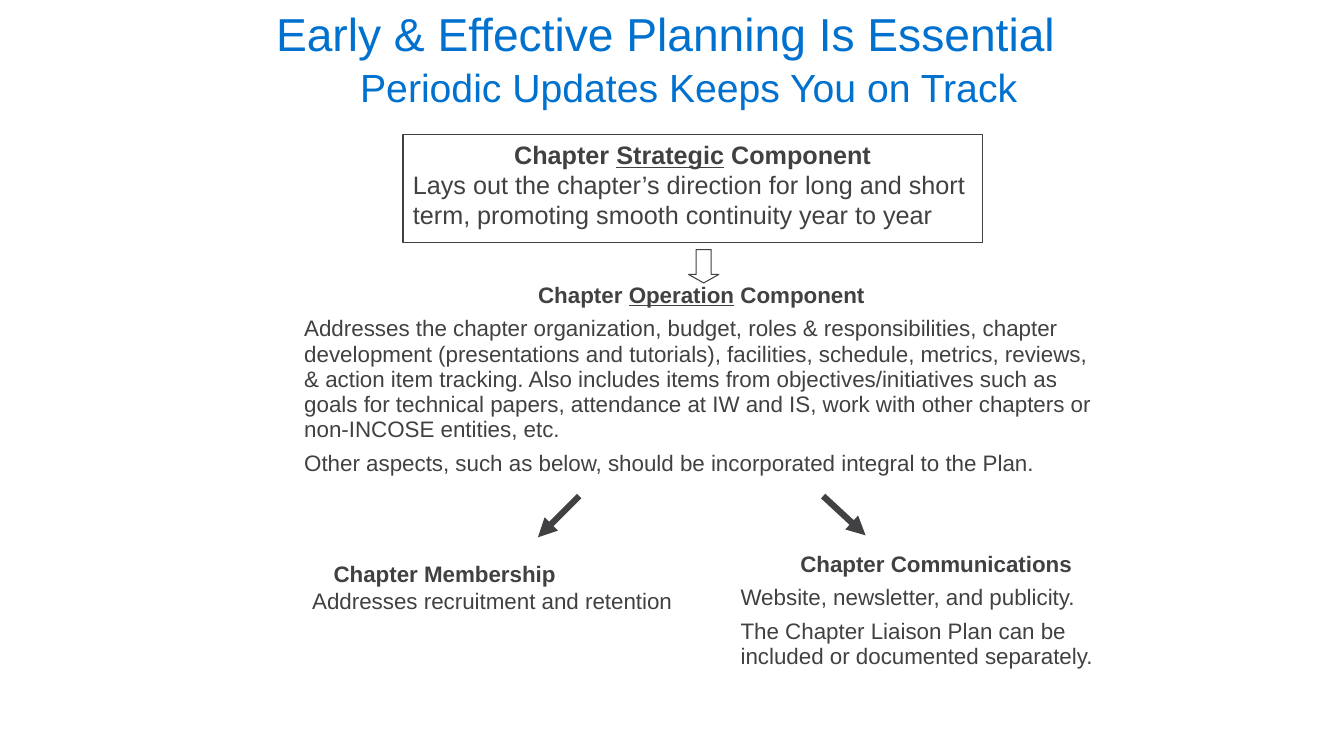
from dataclasses import dataclass

import pptx
import pptx.dml.color
import pptx.enum.shapes
import pptx.enum.text
import pptx.oxml
import pptx.oxml.ns
import pptx.util
from pptx.util import Cm

ALIGN = pptx.enum.text.PP_ALIGN
ANCHOR = pptx.enum.text.MSO_ANCHOR
SHAPE = pptx.enum.shapes.MSO_SHAPE


@dataclass(frozen=True)
class Theme:
    font: str = "Arial"
    blue: str = "0071CE"
    grey: str = "414042"
    white: str = "FFFFFF"
    title: int = 33
    subtitle: int = 28
    strategic: int = 18
    body: int = 16
    outline: float = 0.75
    arrow: float = 4.5


THEME = Theme()


@dataclass(frozen=True)
class Line:
    """One paragraph; an underlined word is given as the middle of three wordings."""
    wordings: tuple[str, ...]
    bold: bool = False
    align: ALIGN = ALIGN.LEFT
    indent: float = 0


@dataclass(frozen=True)
class Block:
    left: float
    top: float
    width: float
    height: float
    lines: tuple[Line, ...]
    size: int = THEME.body
    color: str = THEME.grey
    spaced: bool = False
    framed: bool = False
    anchor: ANCHOR = ANCHOR.TOP
    inset: tuple[float, float] = (0.25, 0.13)


@dataclass(frozen=True)
class Arrow:
    start: tuple[float, float]
    end: tuple[float, float]


def heading(*wordings: str) -> Line:
    return Line(wordings, bold=True, align=ALIGN.CENTER)


BLOCKS = (
    Block(8.05, 1.47, 18.62, 1.83,
          (Line(("Periodic Updates Keeps You on Track",), align=ALIGN.CENTER),),
          size=THEME.subtitle, color=THEME.blue),
    Block(10.16, 3.38, 14.6, 2.74, (
        heading("Chapter ", "Strategic", " Component"),
        Line(("Lays out the chapter’s direction for long and short term, "
              "promoting smooth continuity year to year",)),
    ), size=THEME.strategic, framed=True),
    Block(7.42, 6.99, 20.52, 5.18, (
        heading("Chapter ", "Operation", " Component"),
        Line(("Addresses the chapter organization, budget, roles & responsibilities, "
              "chapter development (presentations and tutorials), facilities, schedule, "
              "metrics, reviews, & action item tracking. Also includes items from "
              "objectives/initiatives such as goals for technical papers, attendance at "
              "IW and IS, work with other chapters or non-INCOSE entities, etc.",)),
        Line(("Other aspects, such as below, should be incorporated integral to the Plan.",),
             align=ALIGN.JUSTIFY),
    ), spaced=True),
    Block(7.62, 13.99, 10, 1.7, (
        Line(("Chapter Membership",), bold=True, indent=0.54),
        Line(("Addresses recruitment and retention",)),
    )),
    Block(18.42, 13.77, 10.36, 3.25, (
        heading("Chapter Communications"),
        Line(("Website, newsletter, and publicity.",)),
        Line(("The Chapter Liaison Plan can be included or documented separately.",)),
    ), spaced=True),
    Block(6.63, 0, 22.23, 1.7, (Line(("Early & Effective Planning Is Essential",)),),
          size=THEME.title, color=THEME.blue, anchor=ANCHOR.BOTTOM, inset=(0.33, 0.18)),
)

ARROWS = (
    Arrow((14.6, 12.5), (13.56, 13.54)),
    Arrow((20.75, 12.5), (21.82, 13.49)),
)


def rgb(color: str) -> pptx.dml.color.RGBColor:
    return pptx.dml.color.RGBColor.from_string(color)


def add_outlined_shape(slide: pptx.slide.Slide, kind: SHAPE, left: float, top: float,
                       width: float, height: float) -> pptx.shapes.autoshape.Shape:
    shape = slide.shapes.add_shape(kind, Cm(left), Cm(top), Cm(width), Cm(height))
    shape.shadow.inherit = False
    shape.fill.solid()
    shape.fill.fore_color.rgb = rgb(THEME.white)
    shape.line.color.rgb = rgb(THEME.grey)
    shape.line.width = pptx.util.Pt(THEME.outline)
    return shape


def add_block(slide: pptx.slide.Slide, block: Block) -> None:
    place = (block.left, block.top, block.width, block.height)
    if block.framed:
        box = add_outlined_shape(slide, SHAPE.RECTANGLE, *place)
    else:
        box = slide.shapes.add_textbox(*map(Cm, place))
    frame = box.text_frame
    frame.word_wrap = True
    frame.vertical_anchor = block.anchor
    frame.margin_left = frame.margin_right = Cm(block.inset[0])
    frame.margin_top = frame.margin_bottom = Cm(block.inset[1])
    frame.text = "\n".join("".join(line.wordings) for line in block.lines)
    for para, line in zip(frame.paragraphs, block.lines):
        format_line(para, line, block)


def format_line(para: pptx.text.text._Paragraph, line: Line, block: Block) -> None:
    para.alignment = line.align
    if block.spaced:
        para.line_spacing = pptx.util.Pt(18)
        para.space_after = pptx.util.Pt(6)
    if line.indent:
        para._p.get_or_add_pPr().set("indent", str(Cm(line.indent)))
    para.runs[0].text = line.wordings[0]
    for wording in line.wordings[1:]:
        para.add_run().text = wording
    for position, span in enumerate(para.runs):
        span.font.name = THEME.font
        span.font.size = pptx.util.Pt(block.size)
        span.font.color.rgb = rgb(block.color)
        span.font.bold = line.bold
        span.font.underline = position == 1


def add_arrow(slide: pptx.slide.Slide, arrow: Arrow) -> None:
    connector = slide.shapes.add_connector(
        pptx.enum.shapes.MSO_CONNECTOR.STRAIGHT, *map(Cm, arrow.start + arrow.end))
    connector.line.color.rgb = rgb(THEME.grey)
    connector.line.width = pptx.util.Pt(THEME.arrow)
    head = pptx.oxml.parse_xml(
        f'<a:tailEnd {pptx.oxml.ns.nsdecls("a")} type="triangle"/>')
    connector.line._get_or_add_ln().append(head)
    connector._element.spPr.append(
        pptx.oxml.parse_xml(f'<a:effectLst {pptx.oxml.ns.nsdecls("a")}/>'))


def main() -> None:
    deck = pptx.Presentation()
    deck.slide_width, deck.slide_height = Cm(33.88), Cm(19.05)
    page = deck.slides.add_slide(deck.slide_layouts[6])
    for block in BLOCKS:
        add_block(page, block)
    down_arrow = add_outlined_shape(page, SHAPE.DOWN_ARROW, 17.36, 6.29, 0.76, 0.84)
    down_arrow.adjustments[1] = 0.28
    for arrow in ARROWS:
        add_arrow(page, arrow)
    deck.save("out.pptx")


if __name__ == "__main__":
    main()
